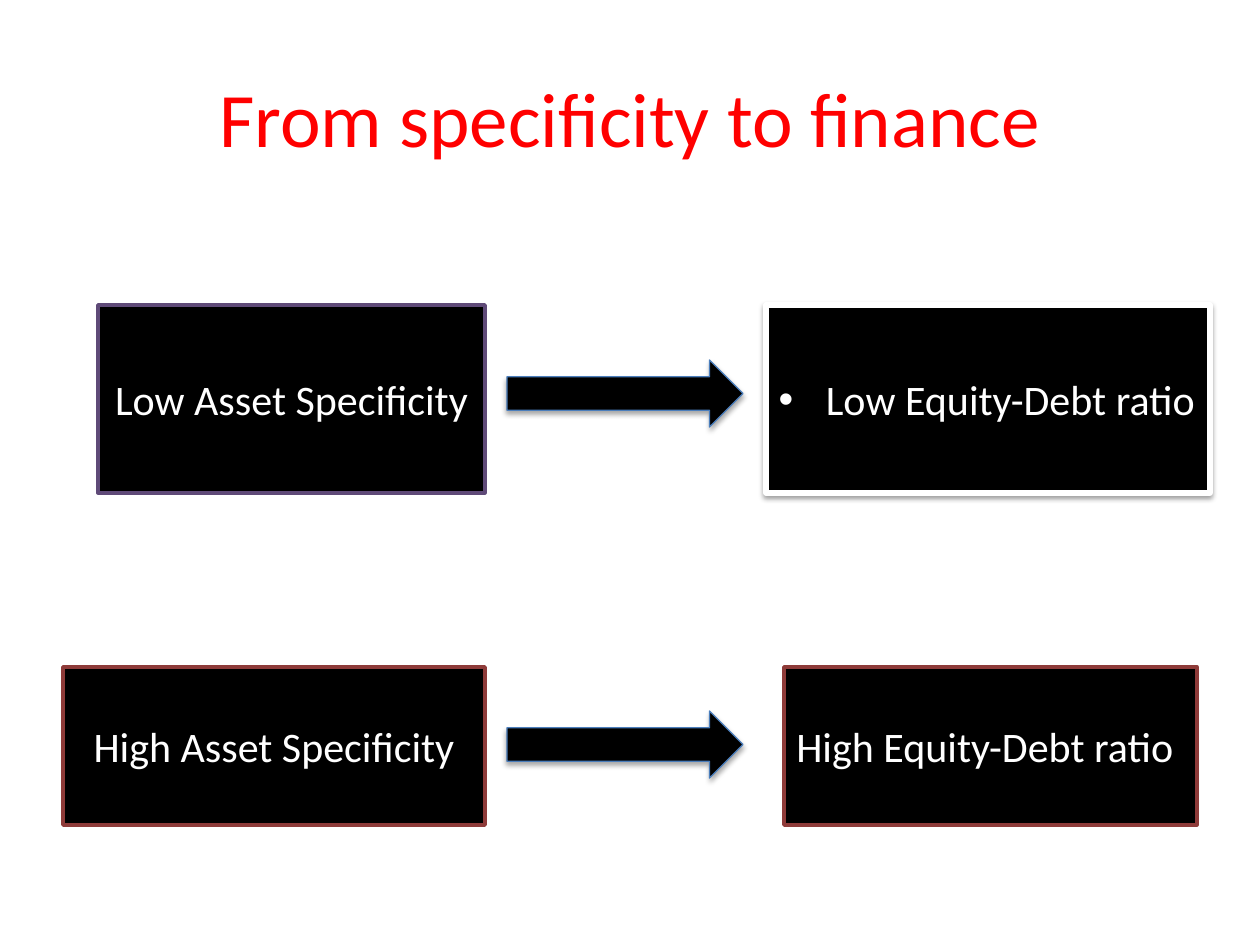
from lxml import etree
from pptx import Presentation
from pptx.dml.color import RGBColor
from pptx.enum.shapes import MSO_SHAPE as Preset
from pptx.enum.text import MSO_ANCHOR as Anchor, MSO_AUTO_SIZE as AutoSize, PP_ALIGN as Align
from pptx.oxml.ns import qn
from pptx.util import Emu, Inches, Pt

EMU_PER_PX = 914400 / 126

RED = RGBColor(0xFF, 0x00, 0x00)
BLACK = RGBColor(0x00, 0x00, 0x00)
WHITE = RGBColor(0xFF, 0xFF, 0xFF)
PURPLE = RGBColor(0x5F, 0x4A, 0x78)
MAROON = RGBColor(0x8E, 0x3B, 0x39)
BLUE = RGBColor(0x4B, 0x7E, 0xBC)


def px(length):
    return Emu(round(length * EMU_PER_PX))


def set_all(target, values):
    for attribute, value in values.items():
        setattr(target, attribute, value)


def place(shape, left, top, width, height):
    set_all(shape, {"left": px(left), "top": px(top),
                    "width": px(width), "height": px(height)})


def paint(shape, outline, weight):
    shape.shadow.inherit = False
    shape.fill.solid()
    shape.fill.fore_color.rgb = BLACK
    shape.line.color.rgb = outline
    shape.line.width = Pt(weight)


def cast_shadow(shape, distance, opacity):
    """Drop a soft black shadow straight down; opacity is in percent."""
    effects = shape._element.spPr.find(qn("a:effectLst"))
    shadow = etree.SubElement(effects, qn("a:outerShdw"), {
        "blurRad": str(Pt(3.1)), "dist": str(Pt(distance)),
        "dir": "5400000", "rotWithShape": "0"})
    color = etree.SubElement(shadow, qn("a:srgbClr"), val=str(BLACK))
    etree.SubElement(color, qn("a:alpha"), val=str(opacity * 1000))


def write(shape, wording, size, color, align):
    frame = shape.text_frame
    set_all(frame, {"text": wording, "word_wrap": True,
                    "auto_size": AutoSize.NONE,
                    "vertical_anchor": Anchor.MIDDLE})
    paragraph = frame.paragraphs[0]
    set_all(paragraph, {"alignment": align, "space_before": Pt(0)})
    set_all(paragraph.font, {"name": "Calibri", "size": Pt(size)})
    paragraph.font.color.rgb = color


def remove_bullet(shape):
    properties = shape.text_frame.paragraphs[0]._p.get_or_add_pPr()
    properties.set("marL", "0")
    properties.set("indent", "0")
    etree.SubElement(properties, qn("a:buNone"))


def add_box(slide, bounds, wording, outline, align):
    box = slide.shapes.add_shape(Preset.RECTANGLE, *map(px, bounds))
    paint(box, outline, 2)
    write(box, wording, 24, WHITE, align)


def add_arrow(slide, top):
    arrow = slide.shapes.add_shape(Preset.RIGHT_ARROW, *map(px, (507, top, 236, 67)))
    paint(arrow, BLUE, 0.75)
    cast_shadow(arrow, 1.8, 35)


def fill_title(slide):
    title = slide.shapes.title
    place(title, 63, 38, 1134, 158)
    write(title, "From specificity to finance", 44, RED, Align.CENTER)


def fill_low_ratio(slide):
    low_ratio = slide.placeholders[1]
    place(low_ratio, 766, 305, 444, 188)
    paint(low_ratio, WHITE, 3)
    cast_shadow(low_ratio, 1.6, 38)
    low_ratio.text_frame.text = ""
    remove_bullet(low_ratio)
    write(low_ratio, "Low Equity-Debt ratio", 24, WHITE, Align.LEFT)


def main():
    deck = Presentation()
    set_all(deck, {"slide_width": Inches(10), "slide_height": Inches(7.5)})
    slide = deck.slides.add_slide(deck.slide_layouts[1])

    fill_title(slide)
    fill_low_ratio(slide)
    for bounds, wording, outline, align in (
        ((98, 305, 387, 188), "Low Asset Specificity", PURPLE, Align.CENTER),
        ((63, 667, 422, 158), "High Asset Specificity", MAROON, Align.CENTER),
        ((784, 667, 413, 158), "High Equity-Debt ratio", MAROON, Align.LEFT),
    ):
        add_box(slide, bounds, wording, outline, align)
    for top in (360, 711):
        add_arrow(slide, top)

    deck.save("out.pptx")


if __name__ == "__main__":
    main()
